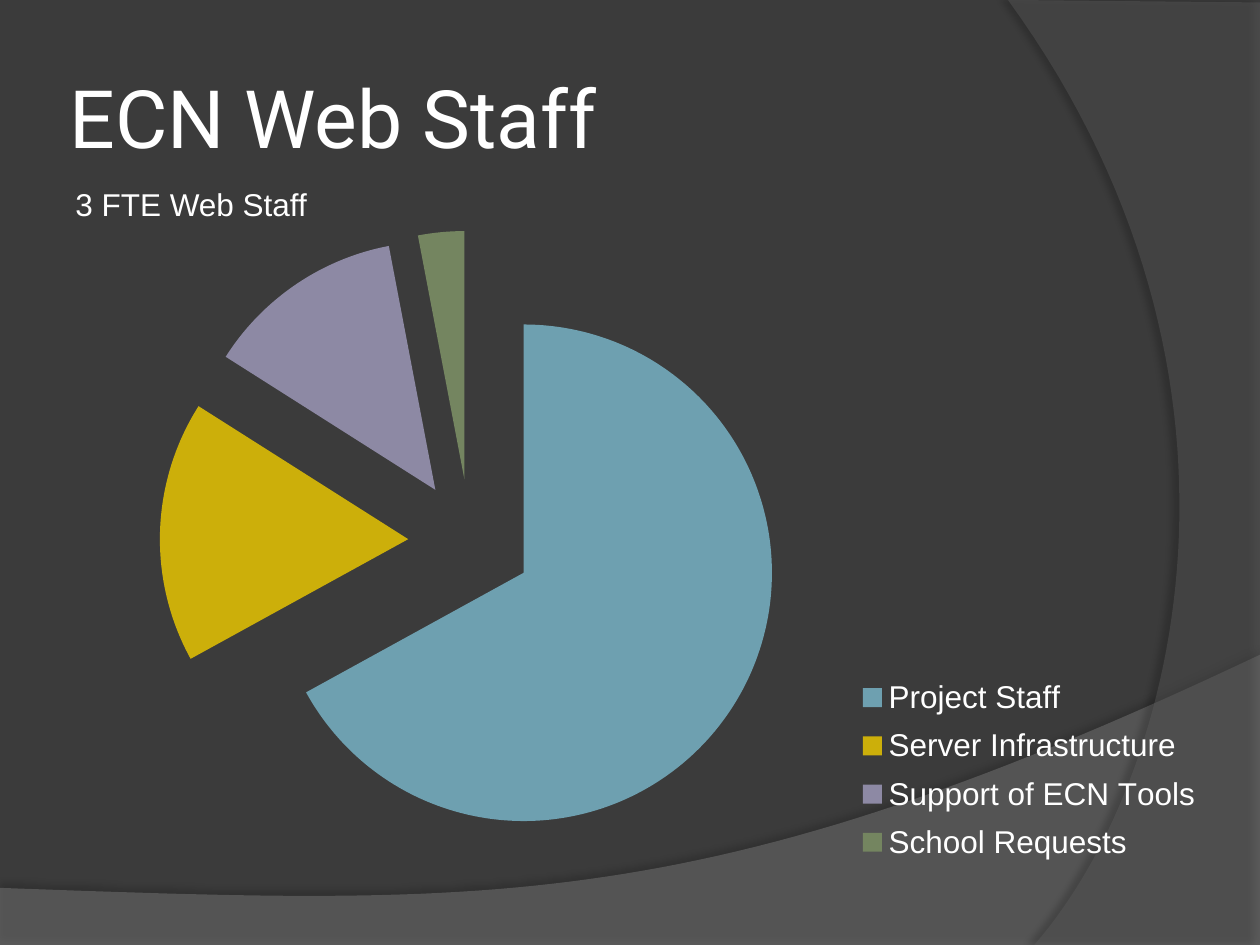
from lxml import etree
from pptx import Presentation
from pptx.chart.data import CategoryChartData
from pptx.dml.color import RGBColor
from pptx.enum.chart import XL_CHART_TYPE, XL_LEGEND_POSITION
from pptx.enum.text import MSO_ANCHOR
from pptx.oxml import parse_xml
from pptx.oxml.ns import nsdecls, qn
from pptx.util import Cm, Pt

BACKGROUND = RGBColor(0x3B, 0x3B, 0x3B)
WHITE = RGBColor(0xFF, 0xFF, 0xFF)
WAVE_GREY = RGBColor(0x7F, 0x7F, 0x7F)
ARC_GREY = RGBColor(0x5E, 0x5E, 0x5E)
BLUE = RGBColor(0x6E, 0xA0, 0xB0)
GOLD = RGBColor(0xCC, 0xAF, 0x0A)
VIOLET = RGBColor(0x8D, 0x89, 0xA4)
GREEN = RGBColor(0x74, 0x85, 0x60)

STAFF_SHARES = [
    ("Project Staff", 67, BLUE),
    ("Server Infrastructure", 17, GOLD),
    ("Support of ECN Tools", 13, VIOLET),
    ("School Requests", 3, GREEN),
]


def bezier(start, control_1, control_2, end, steps=60):
    """Points along a cubic curve, without its start."""
    points = []
    for step in range(1, steps + 1):
        t = step / steps
        weights = ((1 - t) ** 3, 3 * t * (1 - t) ** 2, 3 * t * t * (1 - t), t ** 3)
        corners = (start, control_1, control_2, end)
        points.append(tuple(sum(w * c[axis] for w, c in zip(weights, corners))
                            for axis in (0, 1)))
    return points


def add_swoosh(slide, left, top, corners, curve, color, opacity, shadow):
    """Translucent area: straight corners, then a curve from the last one."""
    outline = [(Cm(left + x), Cm(top + y))
               for x, y in corners + bezier(corners[-1], *curve)]
    builder = slide.shapes.build_freeform(*outline[0], scale=1.0)
    builder.add_line_segments(outline[1:], close=True)
    swoosh = builder.convert_to_shape()
    swoosh.fill.solid()
    swoosh.fill.fore_color.rgb = color
    swoosh.line.fill.background()
    fill_color = swoosh._element.spPr.find(qn("a:solidFill"))[0]
    etree.SubElement(fill_color, qn("a:alpha"), val=str(opacity * 1000))

    # Soft outer shadow
    shadow_opacity, blur, distance, angle = shadow
    swoosh._element.spPr.append(parse_xml(
        f'<a:effectLst {nsdecls("a")}><a:outerShdw blurRad="{Pt(blur)}" '
        f'dist="{Pt(distance)}" dir="{angle * 60000}" algn="ctr" rotWithShape="0">'
        f'<a:srgbClr val="000000"><a:alpha val="{shadow_opacity * 1000}"/>'
        '</a:srgbClr></a:outerShdw></a:effectLst>'))


def add_backdrop(slide):
    slide.background.fill.solid()
    slide.background.fill.fore_color.rgb = BACKGROUND
    # Wave along the bottom
    add_swoosh(slide, 0, 13.2,
               [(0, 4.7), (0, 5.87), (25.4, 5.87), (25.4, 0)],
               [(14.2, 5.31), (9.93, 5.05), (0, 4.7)],
               WAVE_GREY, 45, (35, 4, 3.5, 270))
    # Arc down the right side
    add_swoosh(slide, 20.32, 0,
               [(5.08, 0.05), (5.08, 19.05), (0.53, 19.05)],
               [(3.43, 15.72), (5.54, 7.62), (0, 0)],
               ARC_GREY, 40, (45, 4, 4, 180))


def add_label(slide, left, top, width, height, text, font_name, size,
              side_inset, anchor):
    label = slide.shapes.add_textbox(Cm(left), Cm(top), Cm(width), Cm(height))
    frame = label.text_frame
    frame.word_wrap = True
    frame.vertical_anchor = anchor
    frame.margin_left = frame.margin_right = Cm(side_inset)
    frame.margin_top = frame.margin_bottom = Cm(0.13)
    frame.text = text
    font = frame.paragraphs[0].runs[0].font
    font.name = font_name
    font.size = Pt(size)
    font.color.rgb = WHITE


def set_layout(parent, x, y, width, height, inner=False):
    """Fixed place in the chart, as fractions of its box."""
    for old_layout in parent.findall(qn("c:layout")):
        parent.remove(old_layout)
    target = '<c:layoutTarget val="inner"/>' if inner else ""
    layout = parse_xml(
        f'<c:layout {nsdecls("c")}><c:manualLayout>{target}'
        '<c:xMode val="edge"/><c:yMode val="edge"/>'
        f'<c:x val="{x}"/><c:y val="{y}"/><c:w val="{width}"/><c:h val="{height}"/>'
        '</c:manualLayout></c:layout>')
    position = parent.find(qn("c:legendPos"))
    if position is None:
        parent.insert(0, layout)
    else:
        position.addnext(layout)


def add_staff_pie(slide, left, top, width, height):
    shares = CategoryChartData()
    shares.categories = [name for name, _, _ in STAFF_SHARES]
    shares.add_series("Series 1", [share for _, share, _ in STAFF_SHARES])
    chart = slide.shapes.add_chart(
        XL_CHART_TYPE.PIE_EXPLODED, Cm(left), Cm(top), Cm(width), Cm(height),
        shares).chart
    chart.has_title = False
    chart.font.name = "Arial"
    chart.font.size = Pt(10)
    chart.font.color.rgb = WHITE

    # Slices
    pie = chart.plots[0]
    pie.vary_by_categories = True
    series = pie.series[0]
    for index, (_, _, color) in enumerate(STAFF_SHARES):
        slice_fill = series.points[index].format.fill
        slice_fill.solid()
        slice_fill.fore_color.rgb = color
    for explosion in series._element.findall(qn("c:explosion")):
        explosion.set("val", "25")
    set_layout(chart._chartSpace.chart.plotArea, 0.017, 0.086, 0.71, 0.845, inner=True)

    # Legend
    chart.has_legend = True
    legend = chart.legend
    legend.position = XL_LEGEND_POSITION.RIGHT
    legend.include_in_layout = False
    legend.font.name = "Arial"
    legend.font.size = Pt(18)
    legend.font.color.rgb = WHITE
    set_layout(legend._element, 0.68, 0.68, 0.31, 0.28)


def main():
    presentation = Presentation()
    presentation.slide_width = Cm(25.4)
    presentation.slide_height = Cm(19.05)
    slide = presentation.slides.add_slide(presentation.slide_layouts[6])

    add_backdrop(slide)
    add_label(slide, 1.27, 0.76, 20.75, 3.18, "ECN Web Staff", "Roboto", 46,
              0.13, MSO_ANCHOR.MIDDLE)
    add_staff_pie(slide, 0.43, 3.38, 24.33, 14.81)
    add_label(slide, 1.27, 3.61, 10.59, 1.07, "3 FTE Web Staff", "Arial", 18,
              0.25, MSO_ANCHOR.TOP)
    presentation.save("out.pptx")


if __name__ == "__main__":
    main()
